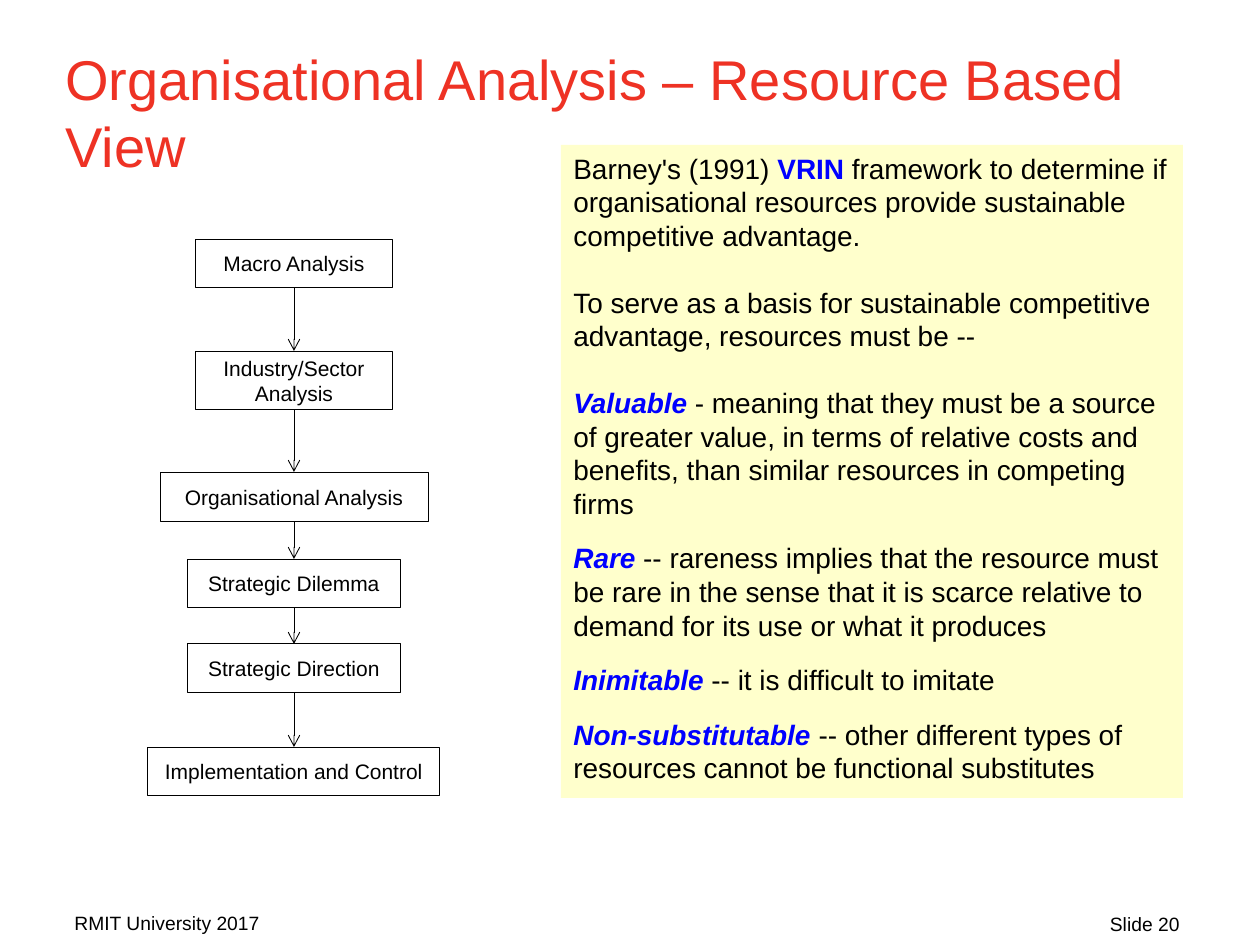
from dataclasses import dataclass
from itertools import pairwise

from lxml.etree import SubElement
from pptx import Presentation
from pptx.dml.color import RGBColor
from pptx.enum.shapes import MSO_CONNECTOR, MSO_SHAPE
from pptx.enum.text import MSO_ANCHOR, PP_ALIGN
from pptx.oxml.ns import qn
from pptx.util import Emu, Pt


@dataclass(frozen=True)
class Theme:
    """Colours, font and type sizes of the slide."""

    font: str = "Arial"
    title: RGBColor = RGBColor(0xEE, 0x32, 0x24)
    text: RGBColor = RGBColor(0, 0, 0)
    accent: RGBColor = RGBColor(0, 0, 0xFF)
    panel: RGBColor = RGBColor(0xFF, 0xFF, 0xCC)
    box: RGBColor = RGBColor(0xFF, 0xFF, 0xFF)
    title_size: int = 32
    body_size: int = 16
    box_size: int = 12
    footer_size: int = 11
    line_width: float = 0.5


THEME = Theme()
PX_PER_INCH = 126

FLOW_STEPS = [
    ("Macro Analysis", 0, 198, 49),
    ("Industry/Sector Analysis", 112, 198, 59),
    ("Organisational Analysis", 233, 268, 50),
    ("Strategic Dilemma", 320, 214, 49),
    ("Strategic Direction", 405, 214, 49),
    ("Implementation and Control", 508, 292, 49),
]

PANEL_PARAGRAPHS = [
    (0, "Barney's (1991) ", "VRIN",
     " framework to determine if organisational resources provide sustainable competitive advantage."),
    (19, "To serve as a basis for sustainable competitive advantage, resources must be --", "", ""),
    (19, "", "Valuable",
     " - meaning that they must be a source of greater value, in terms of relative costs"
     " and benefits, than similar resources in competing firms"),
    (12, "", "Rare",
     " -- rareness implies that the resource must be rare in the sense that it is scarce"
     " relative to demand for its use or what it produces"),
    (12, "", "Inimitable", " -- it is difficult to imitate"),
    (12, "", "Non-substitutable", " -- other different types of resources cannot be functional substitutes"),
]


def px(length):
    """Turn pixels into EMU."""
    return Emu(round(length * 914400 / PX_PER_INCH))


def style_font(font, size, color):
    """Set the typeface, size and colour of a font."""
    font.name = THEME.font
    font.size = Pt(size)
    font.color.rgb = color


def add_label(slide, box, text, size, color, alignment=PP_ALIGN.LEFT):
    """Add a wrapped line of text in the given box."""
    text_frame = slide.shapes.add_textbox(*map(px, box)).text_frame
    text_frame.word_wrap = True
    text_frame.text = text
    paragraph = text_frame.paragraphs[0]
    paragraph.alignment = alignment
    style_font(paragraph.runs[0].font, size, color)


def add_rectangle(slide, box, fill):
    """Add a flat filled rectangle without a line."""
    shape = slide.shapes.add_shape(MSO_SHAPE.RECTANGLE, *map(px, box))
    shape.shadow.inherit = False
    shape.fill.solid()
    shape.fill.fore_color.rgb = fill
    shape.line.fill.background()
    shape.text_frame.word_wrap = True
    return shape


def style_line(line):
    """Give a line the thin black stroke of the flow."""
    line.color.rgb = THEME.text
    line.width = Pt(THEME.line_width)


def add_step(slide, box, text):
    """Add one outlined step of the flow."""
    shape = add_rectangle(slide, box, THEME.box)
    style_line(shape.line)
    text_frame = shape.text_frame
    text_frame.vertical_anchor = MSO_ANCHOR.MIDDLE
    text_frame.text = text
    paragraph = text_frame.paragraphs[0]
    paragraph.alignment = PP_ALIGN.CENTER
    style_font(paragraph.runs[0].font, THEME.box_size, THEME.text)
    return shape


def add_arrow(slide, upper, lower):
    """Join the bottom of one step to the top of the next."""
    connector = slide.shapes.add_connector(MSO_CONNECTOR.STRAIGHT, 0, 0, 0, 0)
    connector.begin_connect(upper, 2)
    connector.end_connect(lower, 0)
    style_line(connector.line)
    SubElement(connector.line._get_or_add_ln(), qn("a:tailEnd"), type="arrow")
    SubElement(connector._element.spPr, qn("a:effectLst"))


def add_flow(slide, box):
    """Stack the analysis steps along the centre of the box."""
    left, top, width, _ = box
    center = left + width / 2
    steps = [
        add_step(slide, (center - step_width / 2, top + offset, step_width, height), text)
        for text, offset, step_width, height in FLOW_STEPS
    ]
    for upper, lower in pairwise(steps):
        add_arrow(slide, upper, lower)


def add_panel(slide, box):
    """Add the shaded panel that explains the framework."""
    text_frame = add_rectangle(slide, box, THEME.panel).text_frame
    text_frame.vertical_anchor = MSO_ANCHOR.TOP
    for index, (space, before, term, after) in enumerate(PANEL_PARAGRAPHS):
        paragraph = text_frame.add_paragraph() if index else text_frame.paragraphs[0]
        paragraph.alignment = PP_ALIGN.LEFT
        paragraph.space_before = Pt(space)
        for text in filter(None, (before, term, after)):
            run = paragraph.add_run()
            run.text = text
            is_term = text == term
            style_font(run.font, THEME.body_size, THEME.accent if is_term else THEME.text)
            run.font.bold = is_term
            run.font.italic = is_term and not before


def add_footer(slide, box):
    """Add the source at the left and the slide number at the right."""
    left, top, width, height = box
    label_width = 294
    add_label(slide, (left, top, label_width, height), "RMIT University 2017",
              THEME.footer_size, THEME.text)
    add_label(slide, (left + width - label_width, top + 1, label_width, height), "Slide 20",
              THEME.footer_size, THEME.text, PP_ALIGN.RIGHT)


def main():
    """Build the slide and save it."""
    presentation = Presentation()
    presentation.slide_width = px(1260)
    presentation.slide_height = px(945)
    slide = presentation.slides.add_slide(presentation.slide_layouts[6])
    add_label(slide, (53, 38, 1134, 127), "Organisational Analysis – Resource Based View",
              THEME.title_size, THEME.title)
    add_panel(slide, (561, 145, 622, 653))
    add_flow(slide, (148, 239, 292, 557))
    add_footer(slide, (62, 905, 1130, 30))
    presentation.save("out.pptx")


if __name__ == "__main__":
    main()
